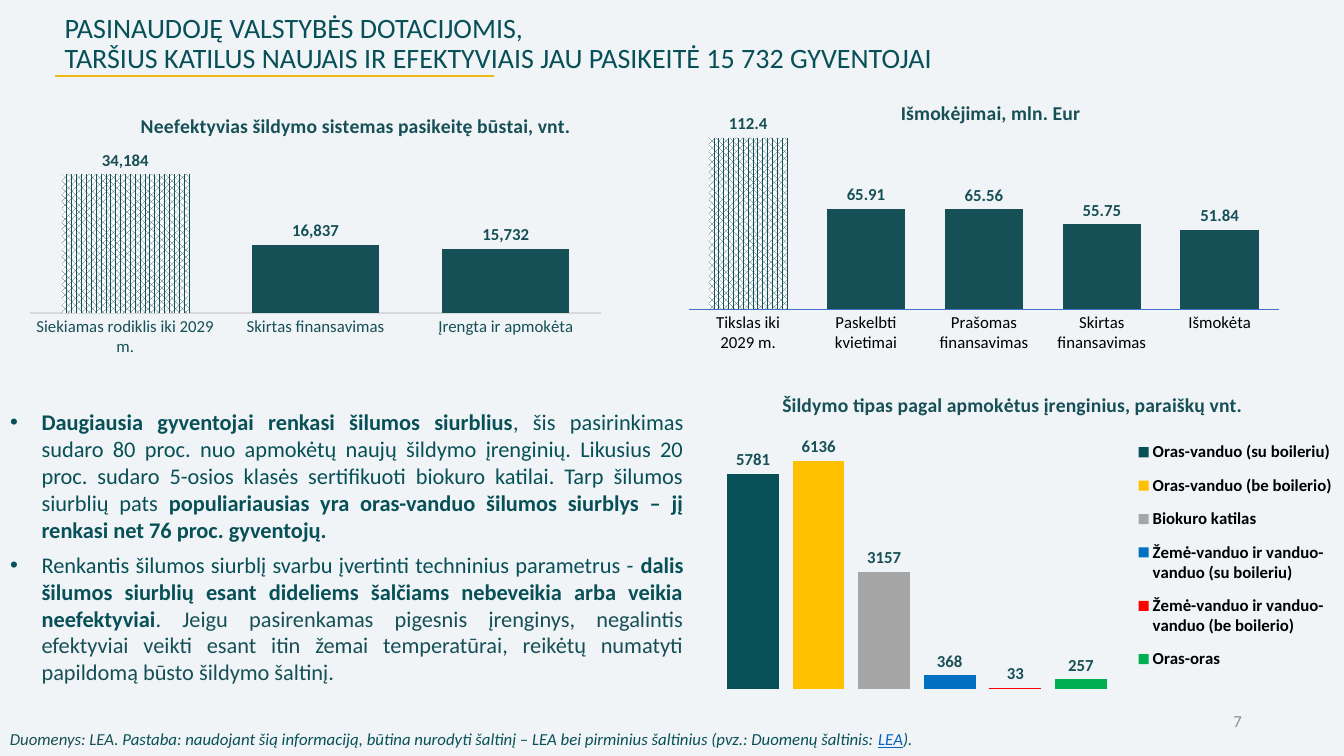
"""Builds the slide on heating subsidies."""
from dataclasses import dataclass

from lxml import etree
from pptx import Presentation
from pptx.chart.data import CategoryChartData
from pptx.dml.color import RGBColor
from pptx.enum import chart as ch, dml, shapes, text
from pptx.oxml import parse_xml
from pptx.oxml.ns import nsdecls, qn
from pptx.util import Pt


@dataclass(frozen=True)
class Theme:
    """Colours, font and type sizes."""
    back: str = "F0F4F7"
    gold: str = "F1B718"
    deep: str = "075057"
    teal: str = "164F56"
    grey: str = "8C8C8C"
    pale: str = "D9D9D9"
    blue: str = "4472C4"
    link: str = "0563C1"
    black: str = "000000"
    white: str = "FFFFFF"
    font: str = "Calibri"
    head: int = 20
    body: int = 16
    name: int = 14
    note: int = 12


class Deck:
    """Holds the theme and the current slide."""

    def __init__(self, theme):
        self.t = theme
        self.prs = Presentation()
        self.prs.slide_width, self.prs.slide_height = Pt(960), Pt(540)
        self.slide = self.prs.slides.add_slide(self.prs.slide_layouts[1])
        self.paint(self.slide.background.fill, theme.back)

    def paint(self, fill, color):
        fill.solid()
        fill.fore_color.rgb = RGBColor.from_string(color)

    def style(self, font, size, color, bold=False, italic=False):
        font.name, font.size = self.t.font, Pt(size)
        font.bold, font.italic = bold, italic
        font.color.rgb = RGBColor.from_string(color)

    def run(self, para, words, size, color, bold=False, italic=False):
        run = para.add_run()
        run.text = words
        self.style(run.font, size, color, bold, italic)
        return run

    def move(self, shape, box):
        shape.left, shape.top, shape.width, shape.height = map(Pt, box)

    def title(self, box, lines):
        shape = self.slide.shapes.title
        self.move(shape, box)
        frame = shape.text_frame
        frame.auto_size = text.MSO_AUTO_SIZE.NONE
        frame.vertical_anchor = text.MSO_ANCHOR.MIDDLE
        para = frame.paragraphs[0]
        para.alignment, para.line_spacing = text.PP_ALIGN.LEFT, 0.9
        for i, line in enumerate(lines):
            if i:
                para.add_line_break()
            self.run(para, line, self.t.head, self.t.deep)

    def bullets(self, box, items):
        shape = self.slide.placeholders[1]
        self.move(shape, box)
        frame = shape.text_frame
        frame.auto_size = text.MSO_AUTO_SIZE.NONE
        for i, item in enumerate(items):
            para = frame.add_paragraph() if i else frame.paragraphs[0]
            props = para._p.get_or_add_pPr()
            props.set("marL", str(Pt(22.5)))
            props.set("indent", str(Pt(-22.5)))
            etree.SubElement(props, qn("a:buFont")).set("typeface", "Arial")
            etree.SubElement(props, qn("a:buChar")).set("char", "•")
            para.alignment, para.line_spacing = text.PP_ALIGN.JUSTIFY, 1.0
            para.space_before, para.space_after = Pt(0), Pt(6)
            for words, bold, color in item:
                self.run(para, words, self.t.body, color, bold)

    def label(self, box, parts, italic=False, align=text.PP_ALIGN.LEFT):
        shape = self.slide.shapes.add_textbox(*map(Pt, box))
        frame = shape.text_frame
        frame.word_wrap = True
        frame.vertical_anchor = text.MSO_ANCHOR.MIDDLE
        para = frame.paragraphs[0]
        para.alignment = align
        for words, color in parts:
            run = self.run(para, words, self.t.note, color, italic=italic)
            if color == self.t.link:
                run.font.underline = True

    def rule(self, x, y, end):
        line = self.slide.shapes.add_connector(
            shapes.MSO_CONNECTOR.STRAIGHT, Pt(x), Pt(y), Pt(end), Pt(y))
        line.line.width = Pt(1.5)
        line.line.color.rgb = RGBColor.from_string(self.t.gold)
        etree.SubElement(line._element.spPr, qn("a:effectLst"))

    def place(self, node, spot, after=None, inner=False):
        for old in node.findall(qn("c:layout")):
            node.remove(old)
        layout = etree.Element(qn("c:layout"))
        manual = etree.SubElement(layout, qn("c:manualLayout"))
        pairs = [("layoutTarget", "inner")] if inner else []
        pairs += [("xMode", "edge"), ("yMode", "edge"), *zip("xywh", spot)]
        for tag, val in pairs:
            etree.SubElement(manual, qn("c:" + tag)).set("val", str(val))
        if after:
            node.find(qn(after)).addnext(layout)
        else:
            node.insert(0, layout)

    def chart(self, box, name, spot, area, cats, rows, top, colors,
              form="General", axis=None, key=None):
        data = CategoryChartData()
        data.categories = cats
        for row, vals in rows:
            data.add_series(row, vals)
        chart = self.slide.shapes.add_chart(
            ch.XL_CHART_TYPE.COLUMN_CLUSTERED, *map(Pt, box), data).chart
        self.style(chart.font, self.t.note, self.t.black)
        chart.has_title = True
        para = chart.chart_title.text_frame.paragraphs[0]
        self.run(para, name, self.t.name, self.t.teal, True)
        root = chart._chartSpace
        plain = f"<c:spPr {nsdecls('c', 'a')}><a:noFill/><a:ln><a:noFill/></a:ln></c:spPr>"
        root.find(qn("c:chart")).addnext(parse_xml(plain))
        inner = root.xpath("c:chart/c:plotArea")[0]
        inner.append(parse_xml(plain))
        self.place(inner, area, inner=True)
        self.place(root.xpath("c:chart/c:title")[0], spot, "c:tx")

        value, cat = chart.value_axis, chart.category_axis
        value.has_major_gridlines = value.visible = False
        value.minimum_scale, value.maximum_scale = 0, top
        cat.major_tick_mark = ch.XL_TICK_MARK.NONE
        cat.visible = axis is not None
        if axis:
            ink, line, width = axis
            self.style(cat.tick_labels.font, self.t.note, ink)
            cat.format.line.color.rgb = RGBColor.from_string(line)
            cat.format.line.width = Pt(width)

        plot = chart.plots[0]
        plot.gap_width, plot.overlap = 50, -27
        plot.vary_by_categories = False
        plot.has_data_labels = True
        tags = plot.data_labels
        tags.show_value = True
        tags.position = ch.XL_LABEL_POSITION.OUTSIDE_END
        tags.number_format, tags.number_format_is_linked = form, False
        self.style(tags.font, self.t.note, self.t.teal, True)
        for row, color in zip(plot.series, colors):
            row.invert_if_negative = False
            self.paint(row.format.fill, color)
        chart.has_legend = key is not None
        if key:
            legend = chart.legend
            legend.position = ch.XL_LEGEND_POSITION.RIGHT
            legend.include_in_layout = False
            self.style(legend.font, self.t.note, self.t.black, True)
            self.place(legend._element, key, "c:legendPos")
        else:
            fill = plot.series[0].points[0].format.fill
            fill.patterned()
            fill.pattern = dml.MSO_PATTERN.PERCENT_70
            fill.fore_color.rgb = RGBColor.from_string(self.t.teal)
            fill.back_color.rgb = RGBColor.from_string(self.t.white)


def main():
    t = Theme()
    deck = Deck(t)
    deck.rule(39.6, 54, 352.8)
    deck.title((38.9, 11.5, 849.6, 40.3), [
        "PASINAUDOJĘ VALSTYBĖS DOTACIJOMIS,",
        "TARŠIUS KATILUS NAUJAIS IR EFEKTYVIAIS JAU PASIKEITĖ 15 732 GYVENTOJAI"])
    deck.label((678.2, 500.4, 216, 28.8), [("7", t.grey)], align=text.PP_ALIGN.RIGHT)
    deck.chart((13, 72, 424.8, 187.2), "Neefektyvias šildymo sistemas pasikeitę būstai, vnt.",
               (0.2, 0.03), (0.02, 0.19, 0.96, 0.62),
               ["Siekiamas rodiklis iki 2029 m.", "Skirtas finansavimas", "Įrengta ir apmokėta"],
               [("Būstai", (34184, 16837, 15732))], 40000, [t.teal],
               form="#,##0", axis=(t.teal, t.pale, 0.75))
    deck.chart((437.8, 64.8, 495.4, 195.1), "Išmokėjimai, mln. Eur",
               (0.41, 0.02), (0.11, 0.13, 0.85, 0.67),
               ["Tikslas iki\n2029 m.", "Paskelbti\nkvietimai", "Prašomas\nfinansavimas",
                "Skirtas\nfinansavimas", "Išmokėta"],
               [("Išmokėjimai", (112.4, 65.91, 65.56, 55.75, 51.84))], 120, [t.teal],
               axis=(t.black, t.blue, 0))
    deck.bullets((0, 288, 495.4, 211), [
        [("Daugiausia gyventojai renkasi šilumos siurblius", True, t.deep),
         (", šis pasirinkimas sudaro 80 proc. nuo apmokėtų naujų šildymo įrenginių. Likusius 20 proc. "
          "sudaro 5-osios klasės sertifikuoti biokuro katilai. Tarp šilumos siurblių pats ", False, t.deep),
         ("populiariausias yra oras-vanduo šilumos siurblys – jį renkasi net 76 proc. gyventojų.",
          True, t.deep)],
        [("Renkantis šilumos siurblį svarbu įvertinti techninius parametrus - ", False, t.deep),
         ("dalis šilumos siurblių esant dideliems šalčiams nebeveikia arba veikia neefektyviai",
          True, t.deep),
         (".", False, t.deep),
         (" Jeigu pasirenkamas pigesnis įrenginys, negalintis efektyviai veikti esant itin žemai "
          "temperatūrai, reikėtų numatyti papildomą būsto šildymo šaltinį.", False, t.teal)]])
    kinds = [("Oras-vanduo (su boileriu)", 5781, t.deep),
             ("Oras-vanduo (be boilerio)", 6136, "FFC000"),
             ("Biokuro katilas", 3157, "A6A6A6"),
             ("Žemė-vanduo ir vanduo-vanduo (su boileriu)", 368, "0070C0"),
             ("Žemė-vanduo ir vanduo-vanduo (be boilerio)", 33, "FF0000"),
             ("Oras-oras", 257, "00B050")]
    deck.chart((501.1, 270, 459.4, 226.8), "Šildymo tipas pagal apmokėtus įrenginius, paraiškų vnt.",
               (0.12, 0.03), (0.02, 0.16, 0.63, 0.82), ["1"],
               [(name, (count,)) for name, count, _ in kinds], 7000,
               [color for *_, color in kinds], key=(0.67, 0.16, 0.32, 0.8))
    deck.label((0, 517, 960, 21.6), [
        ("Duomenys: LEA. ", t.teal),
        ("Pastaba: naudojant šią informaciją, būtina nurodyti šaltinį – LEA bei pirminius šaltinius "
         "(pvz.: Duomenų šaltinis: ", t.deep),
        ("LEA", t.link), (").", t.deep)], italic=True)
    deck.prs.save("out.pptx")


if __name__ == "__main__":
    main()
